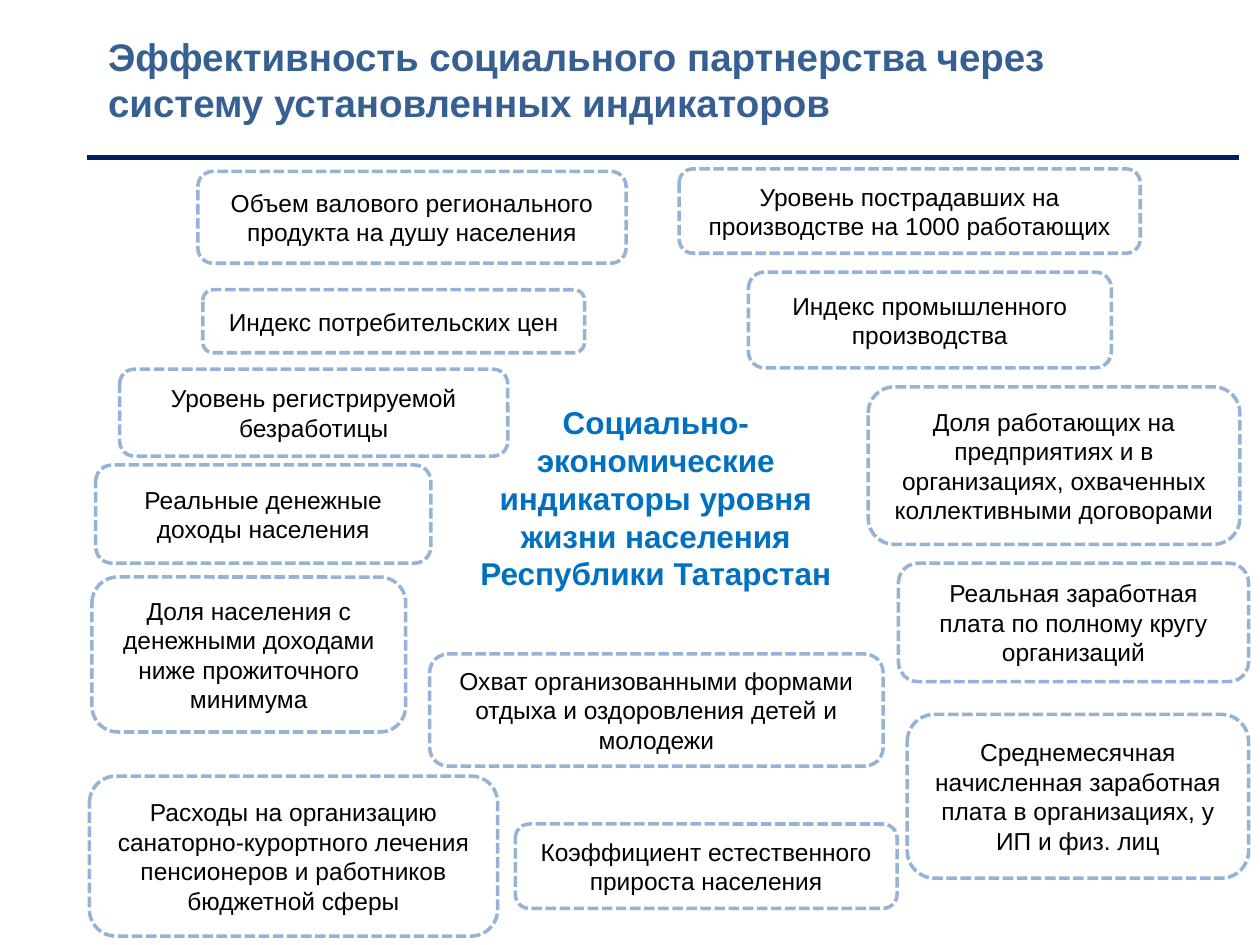
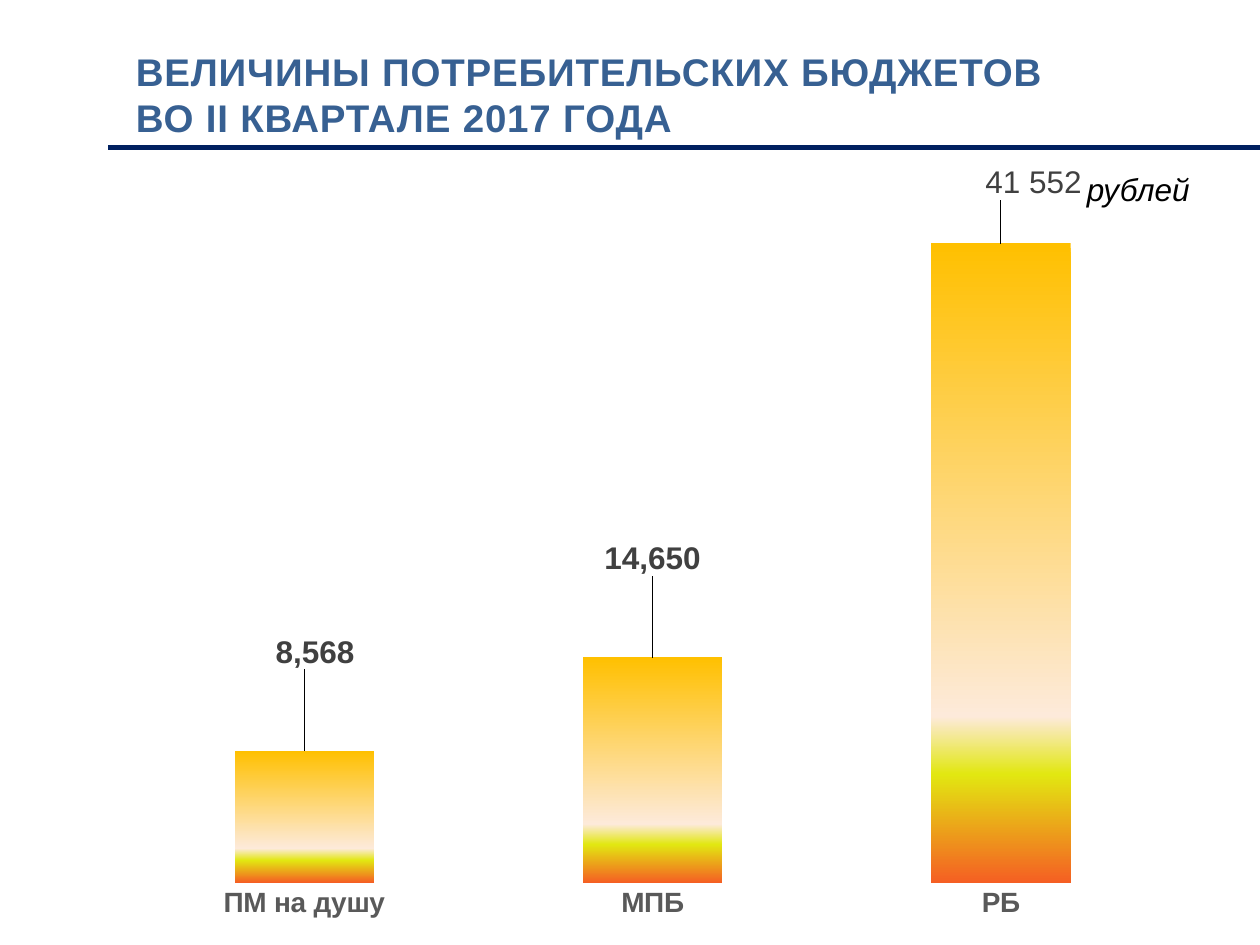
from dataclasses import dataclass

from lxml import etree
from pptx import Presentation
from pptx.chart.data import CategoryChartData
from pptx.dml.color import RGBColor
from pptx.enum.chart import XL_CHART_TYPE, XL_LABEL_POSITION, XL_TICK_MARK
from pptx.enum.dml import MSO_LINE
from pptx.enum.shapes import MSO_CONNECTOR, MSO_SHAPE
from pptx.enum.text import MSO_ANCHOR, MSO_AUTO_SIZE, PP_ALIGN
from pptx.oxml.ns import qn
from pptx.slide import Slide
from pptx.util import Inches, Pt

COLUMN_CLUSTERED = XL_CHART_TYPE.COLUMN_CLUSTERED
OUTSIDE_END = XL_LABEL_POSITION.OUTSIDE_END
NO_TICK = XL_TICK_MARK.NONE
SHORT_DASH = MSO_LINE.SQUARE_DOT
STRAIGHT = MSO_CONNECTOR.STRAIGHT
ROUNDED = MSO_SHAPE.ROUNDED_RECTANGLE
MIDDLE = MSO_ANCHOR.MIDDLE
FIT_SHAPE = MSO_AUTO_SIZE.SHAPE_TO_FIT_TEXT
LEFT, CENTER, RIGHT = PP_ALIGN.LEFT, PP_ALIGN.CENTER, PP_ALIGN.RIGHT

WHITE = RGBColor(0xFF, 0xFF, 0xFF)
BLACK = RGBColor(0x00, 0x00, 0x00)
TITLE_BLUE = RGBColor(0x37, 0x60, 0x92)
RULE_NAVY = RGBColor(0x00, 0x20, 0x60)
FRAME_BLUE = RGBColor(0x95, 0xB3, 0xD7)
THEME_BLUE = RGBColor(0x00, 0x70, 0xC0)
CATEGORY_GRAY = RGBColor(0x59, 0x59, 0x59)
VALUE_GRAY = RGBColor(0x40, 0x40, 0x40)
BAR_STOPS = (
    (0, RGBColor(0xFF, 0xC0, 0x00)),
    (74, RGBColor(0xFD, 0xEA, 0xDA)),
    (83, RGBColor(0xE2, 0xE7, 0x11)),
    (100, RGBColor(0xF5, 0x5F, 0x23)),
)
FONT = "Arial"
THOUSANDS = "#,##0"


@dataclass(frozen=True)
class Box:
    left: float
    top: float
    width: float
    height: float

    def lengths(self) -> tuple:
        return tuple(map(Inches, (self.left, self.top, self.width, self.height)))


@dataclass(frozen=True)
class TextStyle:
    size: float
    color: RGBColor
    bold: bool = False
    italic: bool = False
    align: PP_ALIGN = LEFT


@dataclass(frozen=True)
class Indicator:
    text: str
    box: Box


@dataclass(frozen=True)
class Budget:
    name: str
    value: int
    label_shift: tuple[float, float]
    label: str = ""


TITLE = TextStyle(22, TITLE_BLUE, bold=True)
INDICATOR = TextStyle(14, BLACK, align=CENTER)
THEME = TextStyle(18, THEME_BLUE, bold=True, align=CENTER)
UNIT = TextStyle(18, BLACK, italic=True, align=RIGHT)
CATEGORY = TextStyle(16, CATEGORY_GRAY, bold=True)
VALUE = TextStyle(18, VALUE_GRAY, bold=True)
CUSTOM_VALUE = TextStyle(18, VALUE_GRAY)

INDICATORS = (
    Indicator("Объем валового регионального продукта на душу населения",
              Box(1.57, 1.36, 3.4, 0.73)),
    Indicator("Индекс потребительских цен", Box(1.61, 2.3, 3.03, 0.5)),
    Indicator("Уровень регистрируемой безработицы", Box(0.95, 2.93, 3.08, 0.69)),
    Indicator("Реальные денежные доходы населения", Box(0.76, 3.69, 2.66, 0.78)),
    Indicator("Доля населения с денежными доходами ниже прожиточного минимума",
              Box(0.73, 4.58, 2.49, 1.23)),
    Indicator("Расходы на организацию санаторно-курортного лечения "
              "пенсионеров и работников бюджетной сферы",
              Box(0.71, 6.16, 3.24, 1.27)),
    Indicator("Уровень пострадавших на производстве на 1000 работающих",
              Box(5.39, 1.34, 3.66, 0.67)),
    Indicator("Индекс промышленного производства", Box(5.94, 2.16, 2.88, 0.76)),
    Indicator("Доля работающих на предприятиях и в организациях, "
              "охваченных коллективными договорами",
              Box(6.89, 3.07, 2.95, 1.25)),
    Indicator("Реальная заработная плата по полному кругу организаций",
              Box(7.13, 4.47, 2.78, 0.94)),
    Indicator("Среднемесячная начисленная заработная плата в организациях, "
              "у ИП и физ. лиц",
              Box(7.2, 5.67, 2.71, 1.3)),
    Indicator("Охват организованными формами отдыха и оздоровления детей и молодежи",
              Box(3.41, 5.19, 3.6, 0.89)),
    Indicator("Коэффициент естественного прироста населения",
              Box(4.09, 6.54, 3.03, 0.67)),
)
BUDGETS = (
    Budget("ПМ на душу", 8568, (0.01, -0.1)),
    Budget("МПБ", 14650, (0, -0.1)),
    Budget("РБ", 41532, (0.03, -0.05), "41 552"),
)


def style_font(font, style: TextStyle) -> None:
    font.name = FONT
    font.size = Pt(style.size)
    font.color.rgb = style.color
    font.bold = style.bold
    font.italic = style.italic


def write(text_frame, text: str, style: TextStyle) -> None:
    text_frame.word_wrap = True
    text_frame.text = text
    for paragraph in text_frame.paragraphs:
        paragraph.alignment = style.align
        for run in paragraph.runs:
            style_font(run.font, style)


def add_caption(slide: Slide, text: str, box: Box, style: TextStyle,
                spacing: int = 0) -> None:
    caption = slide.shapes.add_textbox(*box.lengths())
    write(caption.text_frame, text, style)
    caption.text_frame.auto_size = FIT_SHAPE
    if spacing:
        for properties in caption.element.xpath(".//a:rPr"):
            properties.set("spc", str(spacing))


def add_title_rule(slide: Slide, start: float, end: float, top: float) -> None:
    rule = slide.shapes.add_connector(
        STRAIGHT, Inches(start), Inches(top), Inches(end), Inches(top))
    rule.line.color.rgb = RULE_NAVY
    rule.line.width = Pt(3)
    etree.SubElement(rule.element.spPr, qn("a:effectLst"))


def add_indicator(slide: Slide, indicator: Indicator) -> None:
    frame = slide.shapes.add_shape(ROUNDED, *indicator.box.lengths())
    frame.shadow.inherit = False
    frame.fill.solid()
    frame.fill.fore_color.rgb = WHITE
    frame.line.color.rgb = FRAME_BLUE
    frame.line.width = Pt(2)
    frame.line.dash_style = SHORT_DASH
    write(frame.text_frame, indicator.text, INDICATOR)
    frame.text_frame.vertical_anchor = MIDDLE


def set_layout(layout, **settings) -> None:
    manual = etree.SubElement(layout, qn("c:manualLayout"))
    for name, value in settings.items():
        etree.SubElement(manual, qn(f"c:{name}")).set("val", str(value))


def paint_bars(chart, series) -> None:
    series.format.fill.gradient()
    series.format.fill.gradient_angle = 270
    stops = chart.element.xpath("//c:ser/c:spPr/a:gradFill/a:gsLst")[0]
    for stop in list(stops):
        stops.remove(stop)
    for percent, color in BAR_STOPS:
        stop = etree.SubElement(stops, qn("a:gs"), pos=str(percent * 1000))
        etree.SubElement(stop, qn("a:srgbClr"), val=str(color))


def label_bars(chart, series) -> None:
    labels = series.data_labels
    labels.show_value = True
    labels.number_format = THOUSANDS
    labels.number_format_is_linked = False
    labels.position = OUTSIDE_END
    style_font(labels.font, VALUE)
    for index, budget in enumerate(BUDGETS):
        label = series.points[index].data_label
        if budget.label:
            write(label.text_frame, budget.label, CUSTOM_VALUE)
        else:
            style_font(label.font, VALUE)
        label.position = OUTSIDE_END
    for element, budget in zip(chart.element.xpath("//c:dLbl"), BUDGETS):
        for previous in element.findall(qn("c:layout")):
            element.remove(previous)
        layout = etree.Element(qn("c:layout"))
        element.insert(1, layout)
        shift_x, shift_y = budget.label_shift
        set_layout(layout, x=shift_x, y=shift_y)


def add_budget_chart(slide: Slide, box: Box) -> None:
    data = CategoryChartData(number_format=THOUSANDS)
    data.categories = [budget.name for budget in BUDGETS]
    data.add_series("Series 1", [budget.value for budget in BUDGETS])
    chart = slide.shapes.add_chart(COLUMN_CLUSTERED, *box.lengths(), data).chart
    chart.has_legend = False
    chart.has_title = False
    chart.font.name = "Calibri"
    chart.font.size = Pt(10)
    chart.font.color.rgb = BLACK

    values = chart.value_axis
    values.minimum_scale = 0
    values.maximum_scale = 45000
    values.has_major_gridlines = False
    values.visible = False

    categories = chart.category_axis
    categories.major_tick_mark = NO_TICK
    categories.format.line.fill.background()
    style_font(categories.tick_labels.font, CATEGORY)

    plot = chart.plots[0]
    plot.gap_width = 150
    plot.vary_by_categories = False
    series = plot.series[0]
    paint_bars(chart, series)
    label_bars(chart, series)

    plot_area = chart.element.xpath("//c:plotArea")[0]
    for previous in plot_area.findall(qn("c:layout")):
        plot_area.remove(previous)
    layout = etree.Element(qn("c:layout"))
    plot_area.insert(0, layout)
    set_layout(layout, layoutTarget="inner", xMode="edge", yMode="edge",
               x=0.02, y=0.03, w=0.96, h=0.91)


def build_indicators(slide: Slide) -> None:
    add_caption(slide, "Эффективность социального партнерства через "
                "систему установленных индикаторов",
                Box(0.76, 0.21, 8.51, 0.84), TITLE)
    add_title_rule(slide, 0.69, 9.83, 1.25)
    for indicator in INDICATORS:
        add_indicator(slide, indicator)
    add_caption(slide, "Социально-экономические индикаторы уровня жизни "
                "населения Республики Татарстан",
                Box(3.69, 3.15, 3.03, 1.62), THEME)


def build_budgets(slide: Slide) -> None:
    add_budget_chart(slide, Box(0.86, 1.31, 8.64, 6.06))
    add_caption(slide, "ВЕЛИЧИНЫ ПОТРЕБИТЕЛЬСКИХ БЮДЖЕТОВ\nВО II КВАРТАЛЕ 2017 ГОДА",
                Box(0.98, 0.33, 8.78, 0.84), TITLE, spacing=50)
    add_title_rule(slide, 0.86, 10, 1.17)
    add_caption(slide, "рублей", Box(8.45, 1.3, 1.09, 0.4), UNIT)


def main() -> None:
    presentation = Presentation()
    presentation.slide_width = Inches(10)
    presentation.slide_height = Inches(7.5)
    blank = presentation.slide_layouts[6]
    for build in (build_indicators, build_budgets):
        build(presentation.slides.add_slide(blank))
    presentation.save("out.pptx")


if __name__ == "__main__":
    main()
